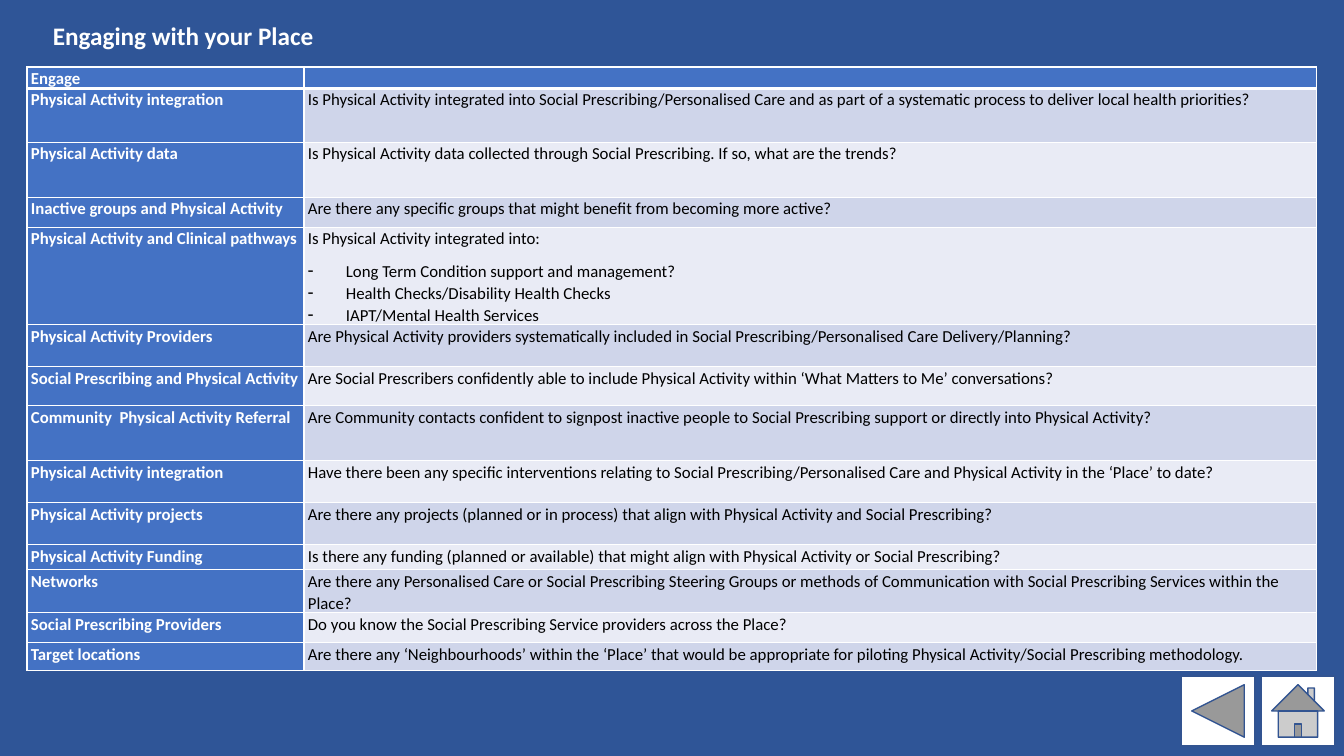
"""Builds the slide of questions for engaging with a Place."""
import pptx
import pptx.dml.color
import pptx.enum.shapes
import pptx.enum.text
import pptx.oxml
import pptx.oxml.ns
import pptx.util
from lxml import etree

PX = 914400 / 100.8
COLORS = {
    "background": "2F5597", "label": "4472C4", "odd": "CFD5EA", "even": "E9EBF5",
    "white": "FFFFFF", "black": "000000", "outline": "325491",
}
COLUMNS = [277, 1013]
ROWS = [
    (21, "Engage", []),
    (54, "Physical Activity integration", ["Is Physical Activity integrated into Social Prescribing/Personalised Care and as part of a systematic process to deliver local health priorities?"]),
    (55, "Physical Activity data", ["Is Physical Activity data collected through Social Prescribing. If so, what are the trends?"]),
    (30, "Inactive groups and Physical Activity", ["Are there any specific groups that might benefit from becoming more active?"]),
    (97, "Physical Activity and Clinical pathways", [
        "Is Physical Activity integrated into:",
        "Long Term Condition support and management?",
        "Health Checks/Disability Health Checks",
        "IAPT/Mental Health Services",
    ]),
    (42, "Physical Activity Providers", ["Are Physical Activity providers systematically included in Social Prescribing/Personalised Care Delivery/Planning?"]),
    (39, "Social Prescribing and Physical Activity", ["Are Social Prescribers confidently able to include Physical Activity within ‘What Matters to Me’ conversations?"]),
    (55, "Community  Physical Activity Referral", ["Are Community contacts confident to signpost inactive people to Social Prescribing support or directly into Physical Activity?"]),
    (42, "Physical Activity integration", ["Have there been any specific interventions relating to Social Prescribing/Personalised Care and Physical Activity in the ‘Place’ to date?"]),
    (42, "Physical Activity projects", ["Are there any projects (planned or in process) that align with Physical Activity and Social Prescribing?"]),
    (25, "Physical Activity Funding", ["Is there any funding (planned or available) that might align with Physical Activity or Social Prescribing?"]),
    (43, "Networks", ["Are there any Personalised Care or Social Prescribing Steering Groups or methods of Communication with Social Prescribing Services within the Place?"]),
    (30, "Social Prescribing Providers", ["Do you know the Social Prescribing Service providers across the Place?"]),
    (28, "Target locations", ["Are there any ‘Neighbourhoods’ within the ‘Place’ that would be appropriate for piloting Physical Activity/Social Prescribing methodology."]),
]


def px(n):
    """Turn pixels into EMU."""
    return pptx.util.Emu(round(n * PX))


def rgb(name):
    """Look up a named colour."""
    return pptx.dml.color.RGBColor.from_string(COLORS[name])


def write(p, text, size=12, color="white", bold=True, spacing=None, after=None):
    """Write formatted text into a paragraph."""
    p.line_spacing = spacing
    if after is not None:
        p.space_after = pptx.util.Pt(after)
    r = p.add_run()
    r.text = text
    r.font.name = "Calibri"
    r.font.size = pptx.util.Pt(size)
    r.font.bold = bold
    r.font.color.rgb = rgb(color)


def add_dash(p):
    """Give a paragraph a hanging dash bullet."""
    pPr = p._p.get_or_add_pPr()
    pPr.set("marL", str(px(38)))
    pPr.set("indent", str(px(-38)))
    etree.SubElement(pPr, pptx.oxml.ns.qn("a:buChar"), char="-")


def add_border(cell, side, width):
    """Draw one white cell border."""
    cell._tc.get_or_add_tcPr().append(pptx.oxml.parse_xml(
        f'<a:ln{side} {pptx.oxml.ns.nsdecls("a")} w="{pptx.util.Pt(width)}">'
        f'<a:solidFill><a:srgbClr val="{COLORS["white"]}"/></a:solidFill></a:ln{side}>'))


def style_cell(cell, row, fill):
    """Set the margins, borders and fill of a cell."""
    cell.margin_left = cell.margin_right = px(4)
    cell.margin_top = cell.margin_bottom = 0
    for side in "LRTB":
        add_border(cell, side, 3 if (row, side) in ((0, "B"), (1, "T")) else 1)
    cell.fill.solid()
    cell.fill.fore_color.rgb = rgb(fill)


def fill_cell(cell, lines, color="white", bold=True):
    """Write the lines of a cell, with dashes after the first."""
    tf = cell.text_frame
    for i, line in enumerate(lines):
        p = tf.add_paragraph() if i else tf.paragraphs[0]
        after = 8 if i in (0, len(lines) - 1) else 0
        write(p, line, color=color, bold=bold, spacing=1.07, after=after)
        if i:
            add_dash(p)
    if not lines:
        etree.SubElement(tf.paragraphs[0]._p, pptx.oxml.ns.qn("a:endParaRPr"), sz="1200")


def add_questions(s):
    """Add the table of topics and questions."""
    height = sum(row[0] for row in ROWS)
    table = s.shapes.add_table(len(ROWS), 2, px(27), px(67), px(sum(COLUMNS)), px(height)).table
    table.first_row = table.horz_banding = False
    for column, width in zip(table.columns, COLUMNS):
        column.width = px(width)
    for i, (row_height, topic, questions) in enumerate(ROWS):
        table.rows[i].height = px(row_height)
        label, body = table.cell(i, 0), table.cell(i, 1)
        style_cell(label, i, "label")
        style_cell(body, i, ("odd" if i % 2 else "even") if i else "label")
        fill_cell(label, [topic])
        fill_cell(body, questions, color="black", bold=False)


def add_title(s, text):
    """Add the slide title."""
    tf = s.shapes.add_textbox(px(43), px(15), px(821), px(72)).text_frame
    tf.word_wrap = True
    tf.vertical_anchor = pptx.enum.text.MSO_ANCHOR.TOP
    write(tf.paragraphs[0], text, size=18)


def add_button(s, kind, left):
    """Add a navigation button."""
    sp = s.shapes.add_shape(kind, px(left), px(676), px(74), px(70))
    sp.shadow.inherit = False
    sp.fill.solid()
    sp.fill.fore_color.rgb = rgb("white")
    sp.line.color.rgb = rgb("outline")
    sp.line.width = pptx.util.Pt(1)


def main():
    """Build and save the slide."""
    prs = pptx.Presentation()
    prs.slide_width, prs.slide_height = px(1344), px(756)
    s = prs.slides.add_slide(prs.slide_layouts[6])
    s.background.fill.solid()
    s.background.fill.fore_color.rgb = rgb("background")
    kinds = pptx.enum.shapes.MSO_SHAPE
    add_button(s, kinds.ACTION_BUTTON_HOME, 1261)
    add_button(s, kinds.ACTION_BUTTON_BACK_OR_PREVIOUS, 1181)
    add_title(s, "Engaging with your Place")
    add_questions(s)
    prs.save("out.pptx")


if __name__ == "__main__":
    main()
